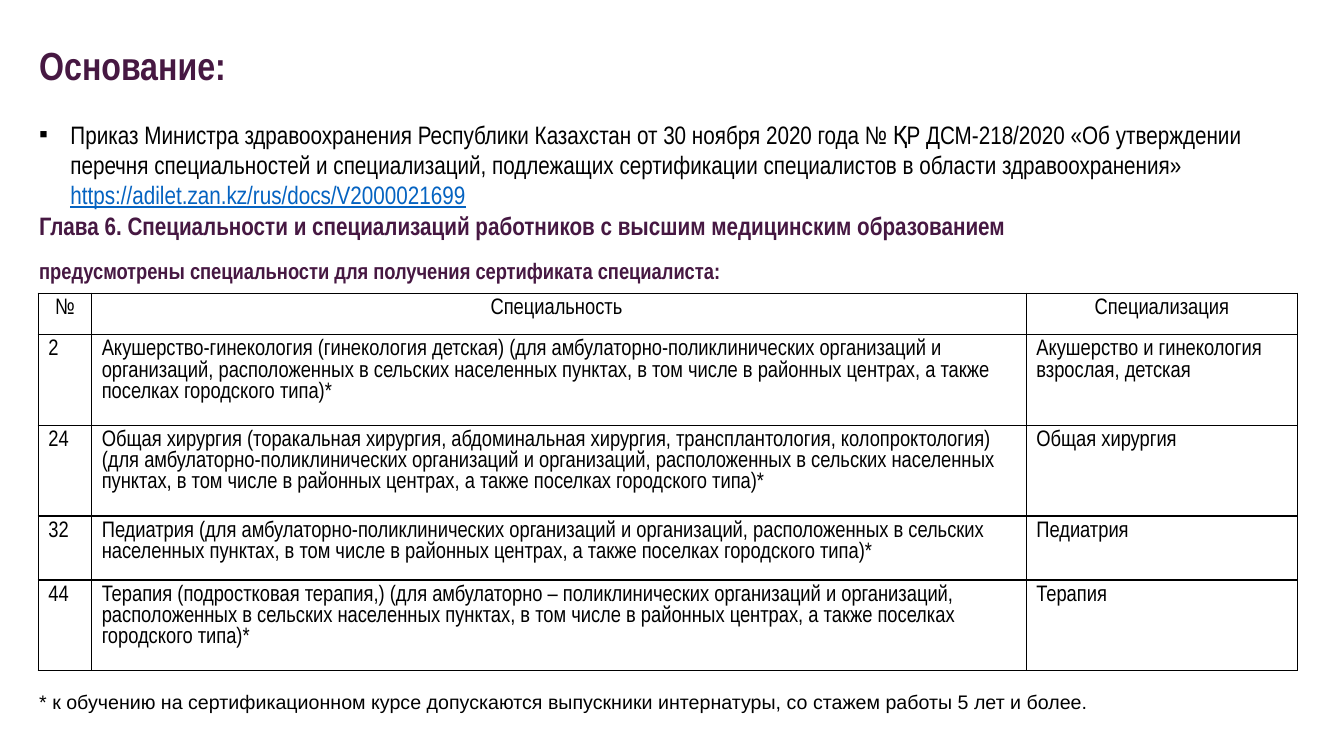
"""Build the slide on the legal basis for specialist certification."""
from dataclasses import dataclass

from lxml import etree
from pptx import Presentation
from pptx.dml.color import RGBColor
from pptx.enum.text import MSO_ANCHOR, PP_ALIGN
from pptx.oxml.ns import qn
from pptx.util import Inches, Pt

CENTER, LEFT = PP_ALIGN.CENTER, PP_ALIGN.LEFT
TOP = MSO_ANCHOR.TOP


@dataclass(frozen=True)
class Theme:
    plum: str = "461842"
    black: str = "000000"
    link: str = "0563C1"
    narrow: str = "Arial Narrow"
    plain: str = "Arial"
    title: int = 28
    body: int = 18
    small: int = 16
    note: int = 14
    border: int = 1


THEME = Theme()


def add_run(paragraph, text, size, color=THEME.black, face=THEME.narrow, **extra):
    run = paragraph.add_run()
    run.text = text
    font_format = {"name": face, "size": Pt(size), "bold": False, **extra}
    for attribute, value in font_format.items():
        setattr(run.font, attribute, value)
    run.font.color.rgb = RGBColor.from_string(color)


def add_text_frame(left, top, width, height):
    frame = slide.shapes.add_textbox(
        Inches(left), Inches(top), Inches(width), Inches(height)).text_frame
    frame.word_wrap = True
    return frame


presentation = Presentation()
presentation.slide_width = Inches(13.33)
presentation.slide_height = Inches(7.5)
slide = presentation.slides.add_slide(presentation.slide_layouts[6])

basis = add_text_frame(0.29, 0.36, 12.62, 2.52)
heading = basis.paragraphs[0]
heading.space_after = Pt(22)
add_run(heading, "Основание:", THEME.title, THEME.plum, bold=True)

order = basis.add_paragraph()
order_properties = order._p.get_or_add_pPr()
order_properties.set("marL", str(Inches(0.31)))
order_properties.set("indent", str(-Inches(0.31)))
etree.SubElement(order_properties, qn("a:buFont"), typeface=THEME.plain)
etree.SubElement(order_properties, qn("a:buChar"), char="▪")
add_run(order, "Приказ Министра здравоохранения Республики Казахстан от 30 ноября 2020 года "
        "№ ҚР ДСМ-218/2020 «Об утверждении перечня специальностей и специализаций, "
        "подлежащих сертификации специалистов в области здравоохранения» ", THEME.body)
add_run(order, "https://adilet.zan.kz/rus/docs/V2000021699", THEME.body, THEME.link, underline=True)

chapter = basis.add_paragraph()
chapter.space_after = Pt(12)
add_run(chapter, "Глава 6. Специальности и специализаций работников с высшим медицинским образованием",
        THEME.body, THEME.plum, bold=True)
add_run(basis.add_paragraph(), "предусмотрены специальности для получения сертификата специалиста:",
        THEME.small, THEME.plum, bold=True)

CLINICS = ("(для амбулаторно-поликлинических организаций и организаций, расположенных в сельских "
           "населенных пунктах, в том числе в районных центрах, а также поселках городского типа)*")
specialties = [
    ("№", "Специальность ", "Специализация"),
    ("2", f"Акушерство-гинекология (гинекология детская) {CLINICS}",
     "Акушерство и гинекология взрослая, детская"),
    ("24", "Общая хирургия (торакальная хирургия, абдоминальная хирургия, трансплантология, "
     f"колопроктология) {CLINICS}", "Общая хирургия"),
    ("32", f"Педиатрия {CLINICS}", "Педиатрия"),
    ("44", "Терапия (подростковая терапия,) "
     + CLINICS.replace("амбулаторно-поликлинических", "амбулаторно – поликлинических"), "Терапия"),
]
column_widths = [0.53, 9.27, 2.69]
row_heights = [0.41, 0.9, 0.9, 0.63, 0.9]

table = slide.shapes.add_table(
    len(specialties), len(column_widths),
    Inches(0.38), Inches(2.91), Inches(12.49), Inches(3.74)).table
table.first_row = False
table.horz_banding = False
for column, width in zip(table.columns, column_widths):
    column.width = Inches(width)

for row, height, texts in zip(table.rows, row_heights, specialties):
    row.height = Inches(height)
    for cell, text in zip(row.cells, texts):
        cell.vertical_anchor = TOP
        paragraph = cell.text_frame.paragraphs[0]
        paragraph.alignment = CENTER if texts is specialties[0] else LEFT
        paragraph.line_spacing = 1.0
        add_run(paragraph, text, THEME.small)
        cell_properties = cell._tc.get_or_add_tcPr()
        for side in ("a:lnL", "a:lnR", "a:lnT", "a:lnB"):
            border = etree.SubElement(cell_properties, qn(side), w=str(Pt(THEME.border)))
            border_fill = etree.SubElement(border, qn("a:solidFill"))
            etree.SubElement(border_fill, qn("a:srgbClr"), val=THEME.black)
        cell.fill.background()

footnote = add_text_frame(0.29, 6.8, 12.58, 0.34)
add_run(footnote.paragraphs[0], "* к обучению на сертификационном курсе допускаются выпускники "
        "интернатуры, со стажем работы 5 лет и более.", THEME.note, face=THEME.plain)

presentation.save("out.pptx")
